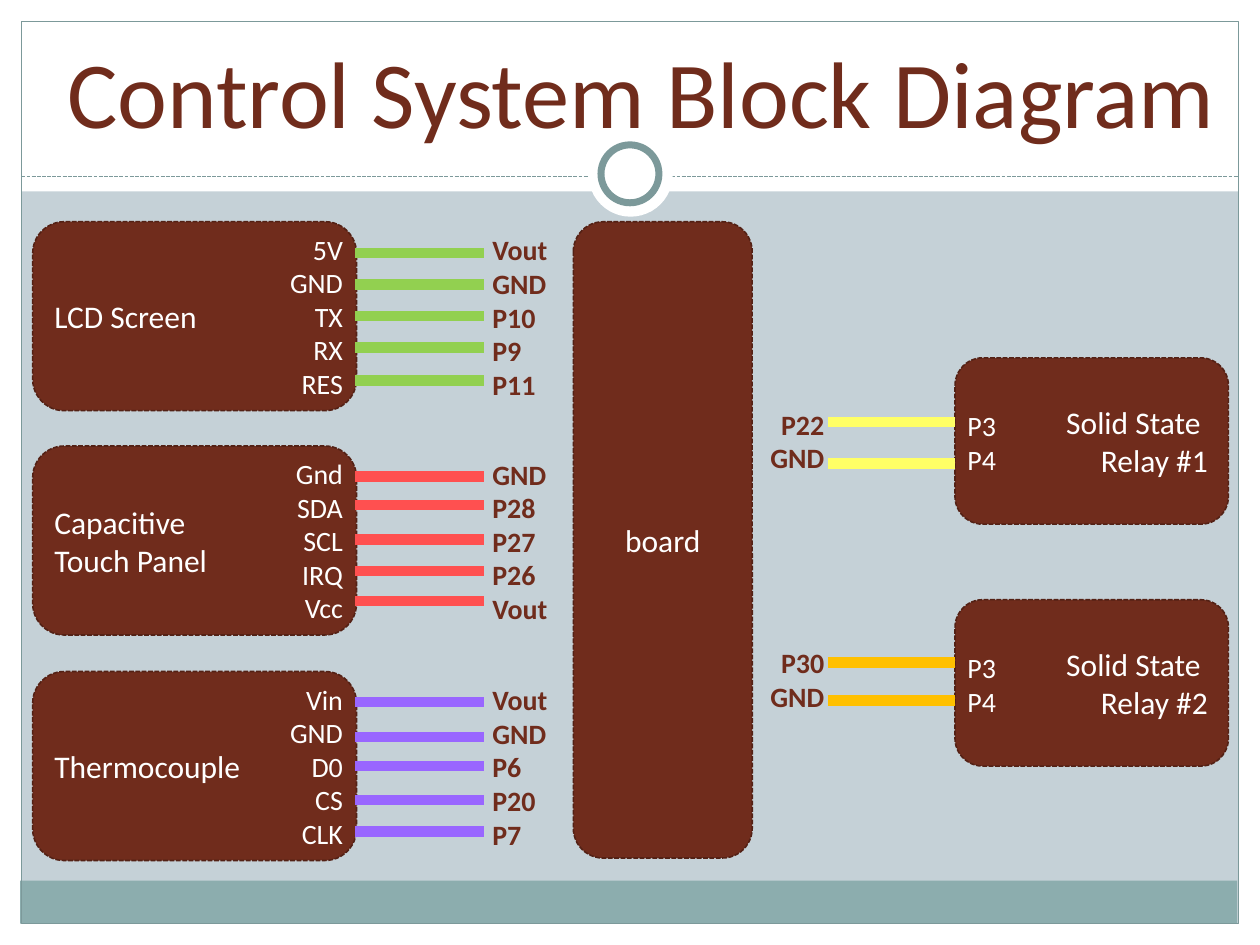
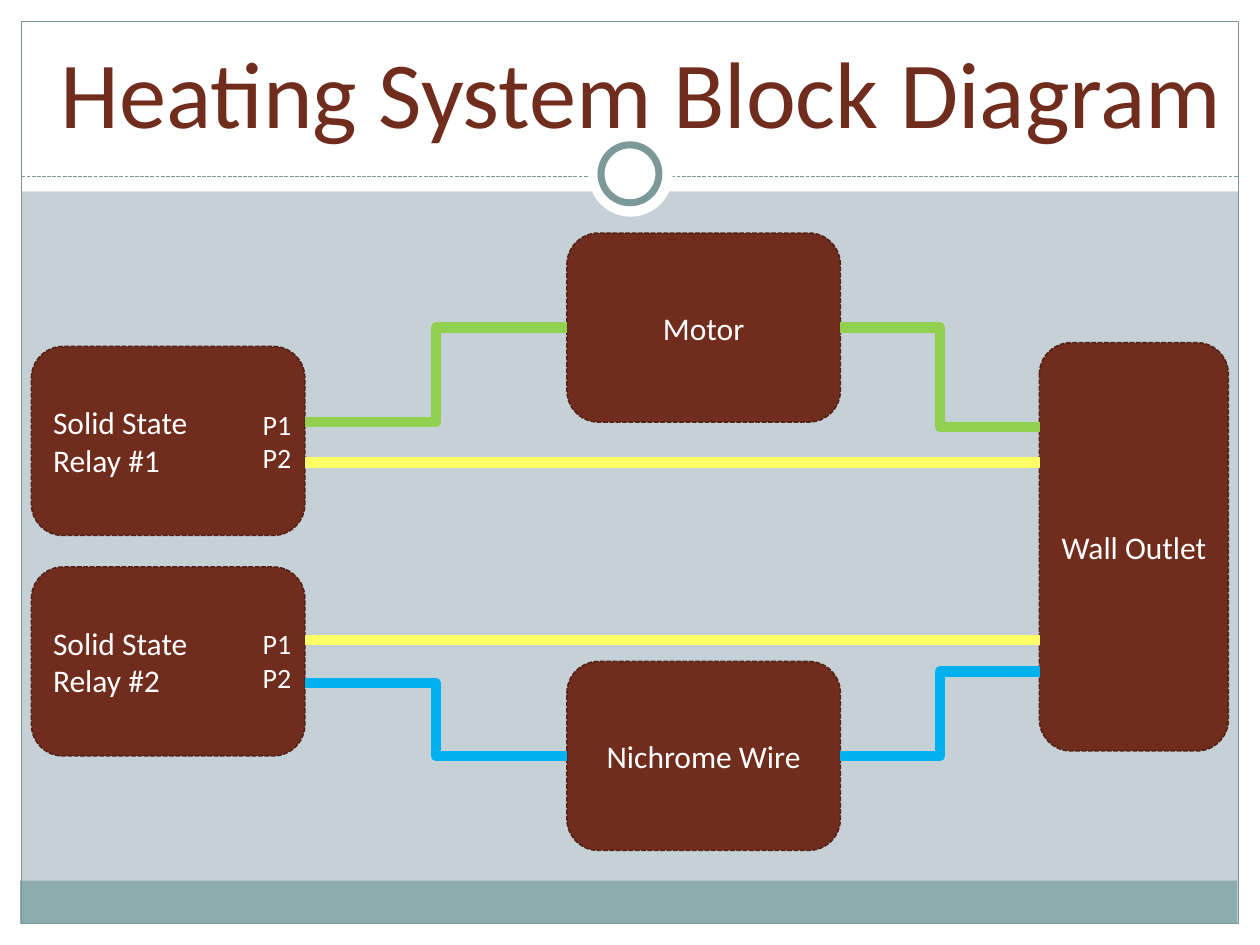
from dataclasses import dataclass

from lxml.etree import SubElement
from pptx import Presentation
from pptx.dml.color import RGBColor
from pptx.enum.dml import MSO_LINE as Dash
from pptx.enum.shapes import MSO_CONNECTOR as Link, MSO_SHAPE as Form
from pptx.enum.text import MSO_ANCHOR as Anchor, PP_ALIGN as Align
from pptx.oxml.ns import qn
from pptx.shapes.autoshape import Shape
from pptx.slide import Slide
from pptx.util import Inches, Pt

FONT = "Calibri"
WHITE, PALE, TEAL, EDGE = "FFFFFF", "C5D1D7", "8CADAE", "7C999A"
BROWN, DARK = "702C1C", "532115"
GREEN, RED, PURPLE = "92D050", "FF5050", "9966FF"
YELLOW, AMBER, BLUE = "FFFF66", "FFC000", "00B0F0"
LEFT, MID, RIGHT = Align.LEFT, Align.CENTER, Align.RIGHT


@dataclass
class Box:
    left: float
    top: float
    width: float
    height: float

    @property
    def end(self) -> float:
        return self.left + self.width

    @property
    def mid(self) -> float:
        return self.top + self.height / 2

    def sizes(self) -> list[int]:
        return [Inches(n) for n in (self.left, self.top, self.width, self.height)]


@dataclass
class Style:
    size: float
    color: str
    align: Align = LEFT
    bold: bool = False


@dataclass
class Part:
    """A block wired to the board."""
    name: str
    top: float
    pins: str
    ports: str
    color: str
    wires: tuple[float, ...]
    port_mid: float


# Drawing tools
def rgb(code: str) -> RGBColor:
    return RGBColor.from_string(code)


def write(shape: Shape, text: str, style: Style, anchor: Anchor = Anchor.MIDDLE) -> None:
    frame = shape.text_frame
    frame.word_wrap = True
    frame.vertical_anchor = anchor
    for i, line in enumerate(text.split("\n")):
        para = frame.paragraphs[0] if i == 0 else frame.add_paragraph()
        para.alignment = style.align
        run = para.add_run()
        run.text = line
        font = run.font
        font.name, font.size, font.bold = FONT, Pt(style.size), style.bold
        font.color.rgb = rgb(style.color)


def label(slide: Slide, box: Box, text: str, style: Style) -> Shape:
    shape = slide.shapes.add_textbox(*box.sizes())
    write(shape, text, style)
    return shape


def form(slide: Slide, kind: Form, box: Box, fill: str | None = None,
         line: str | None = None, width: float = 0.75) -> Shape:
    shape = slide.shapes.add_shape(kind, *box.sizes())
    shape.shadow.inherit = False
    if fill:
        shape.fill.solid()
        shape.fill.fore_color.rgb = rgb(fill)
    else:
        shape.fill.background()
    if line:
        shape.line.color.rgb = rgb(line)
        shape.line.width = Pt(width)
    else:
        shape.line.fill.background()
    return shape


def block(slide: Slide, box: Box, text: str, align: Align = MID) -> None:
    shape = form(slide, Form.ROUNDED_RECTANGLE, box, BROWN, DARK, 0.9)
    shape.line.dash_style = Dash.SQUARE_DOT
    write(shape, text, Style(18, WHITE, align))


def wire(slide: Slide, x1: float, y1: float, x2: float, y2: float,
         color: str, width: float = 6) -> Shape:
    kind = Link.STRAIGHT if y1 == y2 else Link.ELBOW
    link = slide.shapes.add_connector(kind, *map(Inches, (x1, y1, x2, y2)))
    link.line.color.rgb = rgb(color)
    link.line.width = Pt(width)
    SubElement(link._element.spPr, qn("a:effectLst"))
    return link


# Shared frame and title
def start(deck: Presentation, title: str) -> Slide:
    slide = deck.slides.add_slide(deck.slide_layouts[6])
    slide.background.fill.solid()
    slide.background.fill.fore_color.rgb = rgb(PALE)
    for edge in (Box(0, 7.33, 10, 0.17), Box(0, 0, 10, 1.52),
                 Box(0, 0, 0.17, 7.5), Box(9.83, 0, 0.17, 7.5)):
        form(slide, Form.RECTANGLE, edge, WHITE)
    form(slide, Form.RECTANGLE, Box(0.16, 6.99, 9.66, 0.34), TEAL)
    form(slide, Form.RECTANGLE, Box(0.17, 0.17, 9.66, 7.16), line=EDGE)
    rule = wire(slide, 0.17, 1.4, 9.83, 1.4, EDGE, 0.75)
    rule.line.dash_style = Dash.SQUARE_DOT
    form(slide, Form.OVAL, Box(4.67, 1.05, 0.67, 0.67), WHITE)
    form(slide, Form.OVAL, Box(4.77, 1.15, 0.46, 0.46), WHITE, EDGE, 4)
    head = slide.shapes.add_textbox(*Box(0.17, 0.17, 9.67, 1).sizes())
    head.text_frame.margin_top = head.text_frame.margin_bottom = 0
    write(head, title, Style(54, BROWN, MID), Anchor.BOTTOM)
    return slide


# Slide 1: devices left and relays right of the board
DEVICES = (
    Part("LCD Screen", 1.76, "5V\nGND\nTX\nRX\nRES", "Vout\nGND\nP10\nP9\nP11",
         GREEN, (2.01, 2.26, 2.51, 2.76, 3.02), 2.51),
    Part("Capacitive\nTouch Panel", 3.54, "Gnd\nSDA\nSCL\nIRQ\nVcc",
         "GND\nP28\nP27\nP26\nVout", RED, (3.78, 4.01, 4.28, 4.53, 4.77), 4.29),
    Part("Thermocouple", 5.33, "Vin\nGND\nD0\nCS\nCLK", "Vout\nGND\nP6\nP20\nP7",
         PURPLE, (5.57, 5.85, 6.08, 6.35, 6.6), 6.08),
)
RELAYS = (
    Part("Solid State \nRelay #1", 2.84, "P3\nP4", "P22\nGND",
         YELLOW, (3.35, 3.68), 3.5),
    Part("Solid State \nRelay #2", 4.76, "P3\nP4", "P30\nGND",
         AMBER, (5.26, 5.56), 5.39),
)


def control(deck: Presentation) -> None:
    slide = start(deck, " Control System Block Diagram")
    block(slide, Box(4.55, 1.76, 1.42, 5.05), "board")
    for part in DEVICES:
        box = Box(0.26, part.top, 2.57, 1.5)
        block(slide, box, part.name, LEFT)
        label(slide, Box(1.85, part.top, 0.97, 1.5), part.pins, Style(16, WHITE, RIGHT))
        for y in part.wires:
            wire(slide, 2.82, y, 3.84, y, part.color)
        label(slide, Box(3.81, part.port_mid - 0.72, 0.97, 1.45), part.ports,
              Style(16, BROWN, LEFT, True))
    for part in RELAYS:
        box = Box(7.58, part.top, 2.17, 1.32)
        block(slide, box, part.name, RIGHT)
        label(slide, Box(box.left, box.mid - 0.31, 0.83, 0.64), part.pins, Style(16, WHITE))
        for y in part.wires:
            wire(slide, 6.57, y, box.left, y, part.color)
        label(slide, Box(5.67, part.port_mid - 0.32, 0.97, 0.64), part.ports,
              Style(16, BROWN, RIGHT, True))


# Slide 2: each relay feeds a load from the outlet
def heating(deck: Presentation) -> None:
    slide = start(deck, " Heating System Block Diagram")
    wall = Box(8.25, 2.72, 1.5, 3.24)
    block(slide, wall, "Wall Outlet")
    # number, relay top, pin top, load, load top, color, pin y, wall y, straight y
    rows = (
        (1, 2.75, 3.18, "Motor", 1.85, GREEN, 3.35, 3.39, 3.67),
        (2, 4.5, 4.92, "Nichrome Wire", 5.25, BLUE, 5.42, 5.33, 5.08),
    )
    for num, top, pin_top, name, load_top, color, pin_y, wall_y, flat_y in rows:
        relay = Box(0.25, top, 2.17, 1.5)
        load = Box(4.5, load_top, 2.17, 1.5)
        block(slide, relay, f"Solid State\nRelay #{num}", LEFT)
        block(slide, load, name)
        label(slide, Box(1.58, pin_top, 0.83, 0.64), "P1\nP2", Style(16, WHITE, RIGHT))
        wire(slide, relay.end, flat_y, wall.left, flat_y, YELLOW)
        wire(slide, relay.end, pin_y, load.left, load.mid, color)
        wire(slide, load.end, load.mid, wall.left, wall_y, color)


def main() -> None:
    deck = Presentation()
    deck.slide_width, deck.slide_height = Inches(10), Inches(7.5)
    control(deck)
    heating(deck)
    deck.save("out.pptx")


if __name__ == "__main__":
    main()
